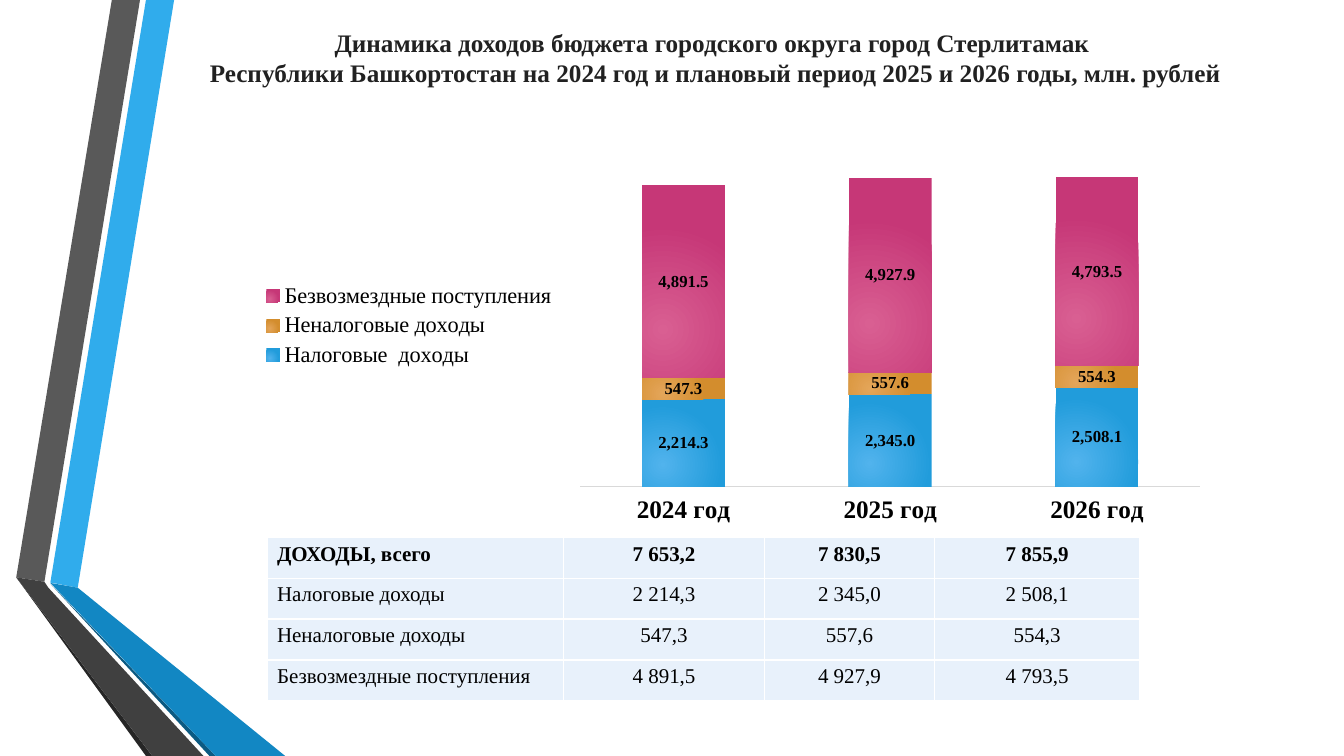
from lxml import etree
from pptx import Presentation
from pptx.chart.data import CategoryChartData
from pptx.dml.color import RGBColor
from pptx.enum.chart import XL_CHART_TYPE, XL_LEGEND_POSITION, XL_TICK_LABEL_POSITION, XL_TICK_MARK
from pptx.enum.text import MSO_ANCHOR, MSO_AUTO_SIZE, PP_ALIGN
from pptx.oxml import parse_xml
from pptx.oxml.ns import nsdecls, qn
from pptx.util import Cm, Pt

STACKED = XL_CHART_TYPE.COLUMN_STACKED
LEFT_LEGEND = XL_LEGEND_POSITION.LEFT
LOW = XL_TICK_LABEL_POSITION.LOW
NO_TICK = XL_TICK_MARK.NONE
MIDDLE = MSO_ANCHOR.MIDDLE
NO_FIT = MSO_AUTO_SIZE.NONE
CENTER = PP_ALIGN.CENTER

FONT = "Times New Roman"
COLORS = {
    "title": "212121", "text": "000000", "axis": "D9D9D9",
    "cell": "E8F1FB", "border": "FFFFFF",
    "blue": "30ACEC", "blue_fold": "1287C3", "blue_edge": "0C5A82",
    "gray": "595959", "gray_fold": "404040", "gray_edge": "262626",
}
RIBBONS = [
    ("blue", [(127, 1468), (196, 1481), (439, 0), (368, 0)]),
    ("gray", [(353, 0), (282, 0), (41, 1455), (112, 1466)]),
    ("gray_edge", [(41, 1455), (368, 1905), (384, 1905)]),
    ("blue_edge", [(127, 1471), (528, 1905), (544, 1905)]),
    ("blue_fold", [(127, 1469), (544, 1905), (719, 1905), (196, 1481)]),
    ("gray_fold", [(513, 1905), (122, 1481), (112, 1466), (41, 1455), (384, 1905)]),
]
YEARS = ["2024 год", "2025 год", "2026 год"]
SERIES = [
    ("Налоговые  доходы", [2214.3, 2345.0, 2508.1], ("51B3ED", "219CDB")),
    ("Неналоговые доходы", [547.3, 557.6, 554.3], ("E4A559", "D38D2D")),
    ("Безвозмездные поступления", [4891.5, 4927.9, 4793.5], ("D95F92", "C63777")),
]
ROWS = [
    ["ДОХОДЫ, всего", "7 653,2", "7 830,5", "7 855,9"],
    ["Налоговые доходы", "2 214,3", "2 345,0", "2 508,1"],
    ["Неналоговые доходы", "547,3", "557,6", "554,3"],
    ["Безвозмездные поступления", "4 891,5", "4 927,9", "4 793,5"],
]
COL_SHARES = [0.34, 0.23, 0.195, 0.235]


def set_font(font, size, color="text", bold=False):
    """Apply the slide's typeface with a size, colour and weight."""
    font.name = FONT
    font.size = Pt(size)
    font.bold = bold
    font.color.rgb = RGBColor.from_string(COLORS[color])


def add_ribbons(slide, left, top):
    """Draw the folded ribbons, whose points are in hundredths of a centimetre."""
    for color, points in RIBBONS:
        fb = slide.shapes.build_freeform(*points[0], scale=Cm(0.01))
        fb.add_line_segments(points[1:], close=True)
        sp = fb.convert_to_shape(left, top)
        sp.shadow.inherit = False
        sp.fill.solid()
        sp.fill.fore_color.rgb = RGBColor.from_string(COLORS[color])
        sp.line.fill.background()


def add_title(slide, left, top, width, height):
    """Fill and place the title placeholder."""
    sp = slide.shapes.title
    sp.left, sp.top, sp.width, sp.height = left, top, width, height
    tf = sp.text_frame
    tf.text = ("Динамика доходов бюджета городского округа город Стерлитамак \v"
               "Республики Башкортостан на 2024 год и плановый период 2025 и 2026 годы, млн. рублей")
    tf.word_wrap = True
    tf.auto_size = NO_FIT
    tf.vertical_anchor = MIDDLE
    p = tf.paragraphs[0]
    p.alignment = CENTER
    set_font(p.font, 18, "title", True)


def fill_radial(series, stops):
    """Give a series a radial gradient centred low in each bar."""
    fill = series.format.fill
    fill.gradient()
    for stop, color in zip(fill.gradient_stops, stops):
        stop.color.rgb = RGBColor.from_string(color)
    lin = next(series._element.iter(qn("a:lin")))
    lin.getparent().replace(lin, parse_xml(
        f'<a:path {nsdecls("a")} path="circle">'
        '<a:fillToRect l="50000" t="100000" r="100000" b="50000"/></a:path>'))


def set_plot_box(chart, x, y, w, h):
    """Fix the inner plot area as fractions of the chart."""
    area = chart._chartSpace.chart.plotArea
    for old in area.findall(qn("c:layout")):
        area.remove(old)
    layout = etree.Element(qn("c:layout"))
    manual = etree.SubElement(layout, qn("c:manualLayout"))
    settings = [("layoutTarget", "inner"), ("xMode", "edge"), ("yMode", "edge"),
                ("x", x), ("y", y), ("w", w), ("h", h)]
    for tag, val in settings:
        etree.SubElement(manual, qn(f"c:{tag}")).set("val", str(val))
    area.insert(0, layout)


def add_income_chart(slide, left, top, width, height):
    """Add the stacked columns of income by year."""
    data = CategoryChartData(number_format="#,##0.0")
    data.categories = YEARS
    for name, values, _ in SERIES:
        data.add_series(name, values)
    chart = slide.shapes.add_chart(STACKED, left, top, width, height, data).chart
    chart.has_title = False
    set_font(chart.font, 10)
    chart.has_legend = True
    chart.legend.position = LEFT_LEGEND
    chart.legend.include_in_layout = False
    set_font(chart.legend.font, 16)

    cat_axis = chart.category_axis
    cat_axis.major_tick_mark = NO_TICK
    cat_axis.tick_label_position = LOW
    cat_axis.format.line.color.rgb = RGBColor.from_string(COLORS["axis"])
    cat_axis.format.line.width = Pt(1)
    set_font(cat_axis.tick_labels.font, 18, bold=True)
    val_axis = chart.value_axis
    val_axis.visible = False
    val_axis.has_major_gridlines = False
    val_axis.minimum_scale, val_axis.maximum_scale = 0, 9000

    plot = chart.plots[0]
    plot.gap_width, plot.overlap = 150, 100
    plot.vary_by_categories = False
    for series, (_, _, stops) in zip(plot.series, SERIES):
        fill_radial(series, stops)
        labels = series.data_labels
        labels.show_value = True
        labels.number_format = "#,##0.0"
        labels.number_format_is_linked = False
        set_font(labels.font, 12, bold=True)
    set_plot_box(chart, 0.34, 0.02, 0.64, 0.88)


def add_borders(cell):
    """Draw thin borders around a table cell."""
    tc_pr = cell._tc.get_or_add_tcPr()
    for side in ("lnL", "lnR", "lnT", "lnB"):
        ln = etree.SubElement(tc_pr, qn(f"a:{side}"), w=str(Pt(1)))
        fill = etree.SubElement(ln, qn("a:solidFill"))
        etree.SubElement(fill, qn("a:srgbClr"), val=COLORS["border"])


def add_income_table(slide, left, top, width, height):
    """Add the table of income totals and their parts."""
    table = slide.shapes.add_table(len(ROWS), len(COL_SHARES), left, top, width, height).table
    table.first_row = table.horz_banding = False
    for col, share in zip(table.columns, COL_SHARES):
        col.width = int(width * share)
    for i, row in enumerate(ROWS):
        for j, text in enumerate(row):
            cell = table.cell(i, j)
            add_borders(cell)
            cell.fill.solid()
            cell.fill.fore_color.rgb = RGBColor.from_string(COLORS["cell"])
            cell.text = text
            p = cell.text_frame.paragraphs[0]
            set_font(p.font, 15, bold=i == 0)
            if j:
                p.alignment = CENTER


def main():
    """Build the slide and save it."""
    prs = Presentation()
    prs.slide_width, prs.slide_height = Cm(33.88), Cm(19.05)
    slide = prs.slides.add_slide(prs.slide_layouts[5])
    add_ribbons(slide, Cm(0), Cm(0))
    add_title(slide, Cm(3.53), Cm(0.76), Cm(29), Cm(1.37))
    add_income_chart(slide, Cm(6.32), Cm(3.12), Cm(24.43), Cm(10.16))
    add_income_table(slide, Cm(6.73), Cm(13.54), Cm(22), Cm(4.12))
    prs.save("out.pptx")


if __name__ == "__main__":
    main()
